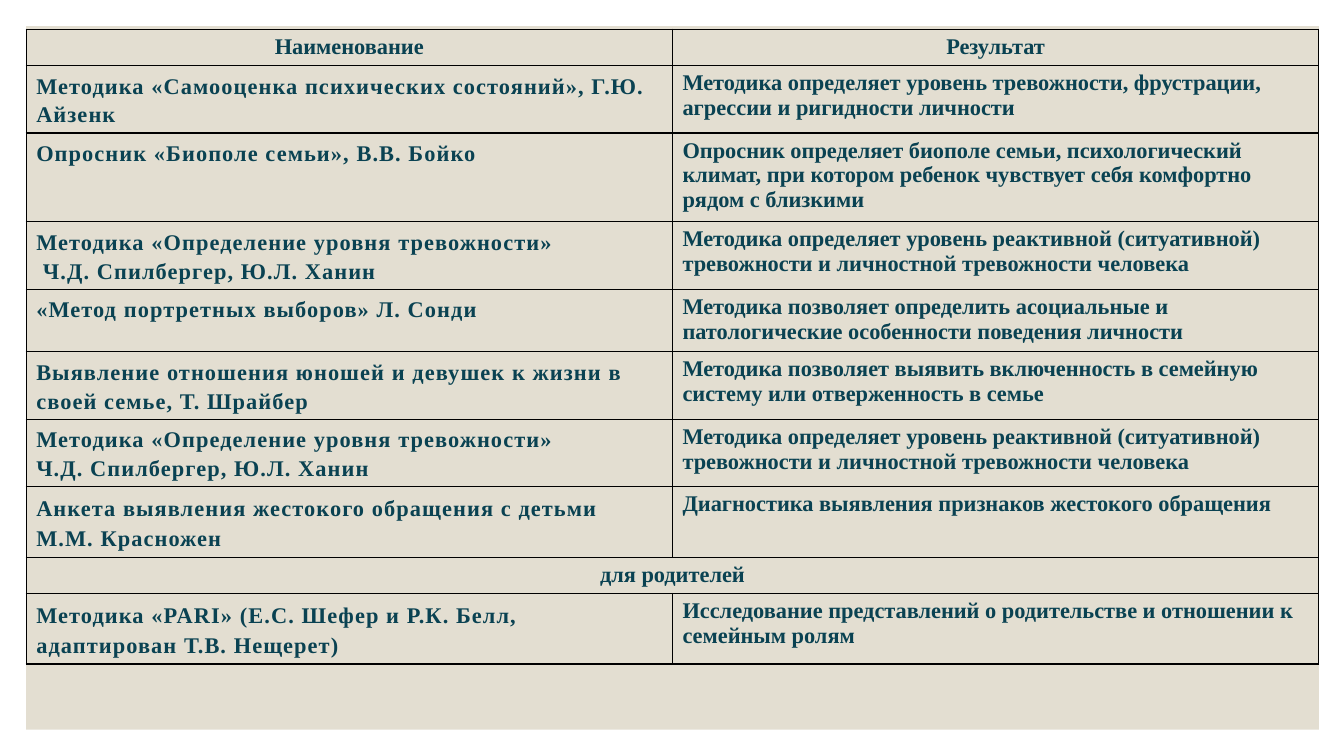
from pptx import Presentation
from pptx import util as u
from pptx.dml.color import RGBColor
from pptx.enum import shapes, text
from pptx.oxml.ns import qn
from lxml import etree

TEAL = RGBColor(0x0A, 0x42, 0x52)
BEIGE = RGBColor(0xE3, 0xDE, 0xD1)
FONT = "Times New Roman"

# Content: row height, line spacing of the method, method, result
HEADINGS = ("Наименование", "Результат")
PARENTS_HEADING = "для родителей"
ANXIETY_RESULT = ("Методика определяет уровень реактивной (ситуативной) "
                  "тревожности и личностной тревожности человека")
METHODS = [
    (0.67, 1.15, "Методика «Самооценка психических состояний», Г.Ю. Айзенк",
     "Методика определяет уровень тревожности, фрустрации, агрессии и ригидности личности"),
    (0.88, 1.15, "Опросник «Биополе семьи», В.В. Бойко",
     "Опросник определяет биополе семьи, психологический климат, при котором "
     "ребенок чувствует себя комфортно рядом с близкими"),
    (0.67, 1.15, "Методика «Определение уровня тревожности»\n Ч.Д. Спилбергер, Ю.Л. Ханин",
     ANXIETY_RESULT),
    (0.62, 1.15, "«Метод портретных выборов» Л. Сонди",
     "Методика позволяет определить асоциальные и патологические особенности поведения личности"),
    (0.67, 1.15, "Выявление отношения юношей и девушек к жизни в своей семье, Т. Шрайбер",
     "Методика позволяет выявить включенность в семейную систему или отверженность в семье"),
    (0.67, 1.15, "Методика «Определение уровня тревожности»\nЧ.Д. Спилбергер, Ю.Л. Ханин",
     ANXIETY_RESULT),
    (0.7, 1.2, "Анкета выявления жестокого обращения с детьми М.М. Красножен",
     "Диагностика выявления признаков жестокого обращения"),
]
PARENT_METHODS = [
    (0.7, 1.2, "Методика «PARI» (Е.С. Шефер и Р.К. Белл, адаптирован Т.В. Нещерет)",
     "Исследование представлений о родительстве и отношении к семейным ролям"),
]
HEADING_HEIGHT = 0.36
COLUMN_WIDTH = 6.41


def write(cell, content, align=text.PP_ALIGN.LEFT, line_spacing=1.0, tracking=0):
    """Fill a cell with bold text; tracking is in points."""
    cell.text_frame.text = content
    for paragraph in cell.text_frame.paragraphs:
        paragraph.alignment = align
        paragraph.line_spacing = line_spacing
        for run in paragraph.runs:
            run.font.name = FONT
            run.font.size = u.Pt(16)
            run.font.bold = True
            run.font.color.rgb = TEAL
            run.font._element.set("spc", str(round(tracking * 100)))


def add_borders(cell):
    """Draw a black one-point line on every side of a cell."""
    properties = cell._tc.get_or_add_tcPr()
    for position, side in enumerate(("lnL", "lnR", "lnT", "lnB")):
        line = etree.Element(qn(f"a:{side}"), w=str(u.Pt(1)))
        fill = etree.SubElement(line, qn("a:solidFill"))
        etree.SubElement(fill, qn("a:srgbClr"), val="000000")
        properties.insert(position, line)


def write_methods(table, first_row, methods):
    for row, (height, spacing, method, result) in enumerate(methods, first_row):
        table.rows[row].height = u.Inches(height)
        write(table.cell(row, 0), method, line_spacing=spacing, tracking=0.8)
        write(table.cell(row, 1), result)


def main():
    presentation = Presentation()
    presentation.slide_width = u.Inches(13.33)
    presentation.slide_height = u.Inches(7.5)
    slide = presentation.slides.add_slide(presentation.slide_layouts[6])

    # Beige panel
    panel = slide.shapes.add_shape(
        shapes.MSO_SHAPE.RECTANGLE,
        u.Inches(0.26), u.Inches(0.26), u.Inches(12.82), u.Inches(6.98))
    panel.shadow.inherit = False
    panel.fill.solid()
    panel.fill.fore_color.rgb = BEIGE
    panel.line.fill.background()

    # Table frame
    parents_row = 1 + len(METHODS)
    row_count = parents_row + 1 + len(PARENT_METHODS)
    table_height = 2 * HEADING_HEIGHT + sum(row[0] for row in METHODS + PARENT_METHODS)
    table = slide.shapes.add_table(
        row_count, 2, u.Inches(0.26), u.Inches(0.29),
        u.Inches(2 * COLUMN_WIDTH), u.Inches(table_height)).table
    table.first_row = False
    table.horz_banding = False
    for column in table.columns:
        column.width = u.Inches(COLUMN_WIDTH)
    for cell in table.iter_cells():
        cell.fill.background()
        add_borders(cell)

    # Headings
    for row in (0, parents_row):
        table.rows[row].height = u.Inches(HEADING_HEIGHT)
    for column, heading in enumerate(HEADINGS):
        write(table.cell(0, column), heading, align=text.PP_ALIGN.CENTER)
    table.cell(parents_row, 0).merge(table.cell(parents_row, 1))
    write(table.cell(parents_row, 0), PARENTS_HEADING, align=text.PP_ALIGN.CENTER)

    # Methods
    write_methods(table, 1, METHODS)
    write_methods(table, parents_row + 1, PARENT_METHODS)

    presentation.save("out.pptx")


if __name__ == "__main__":
    main()
